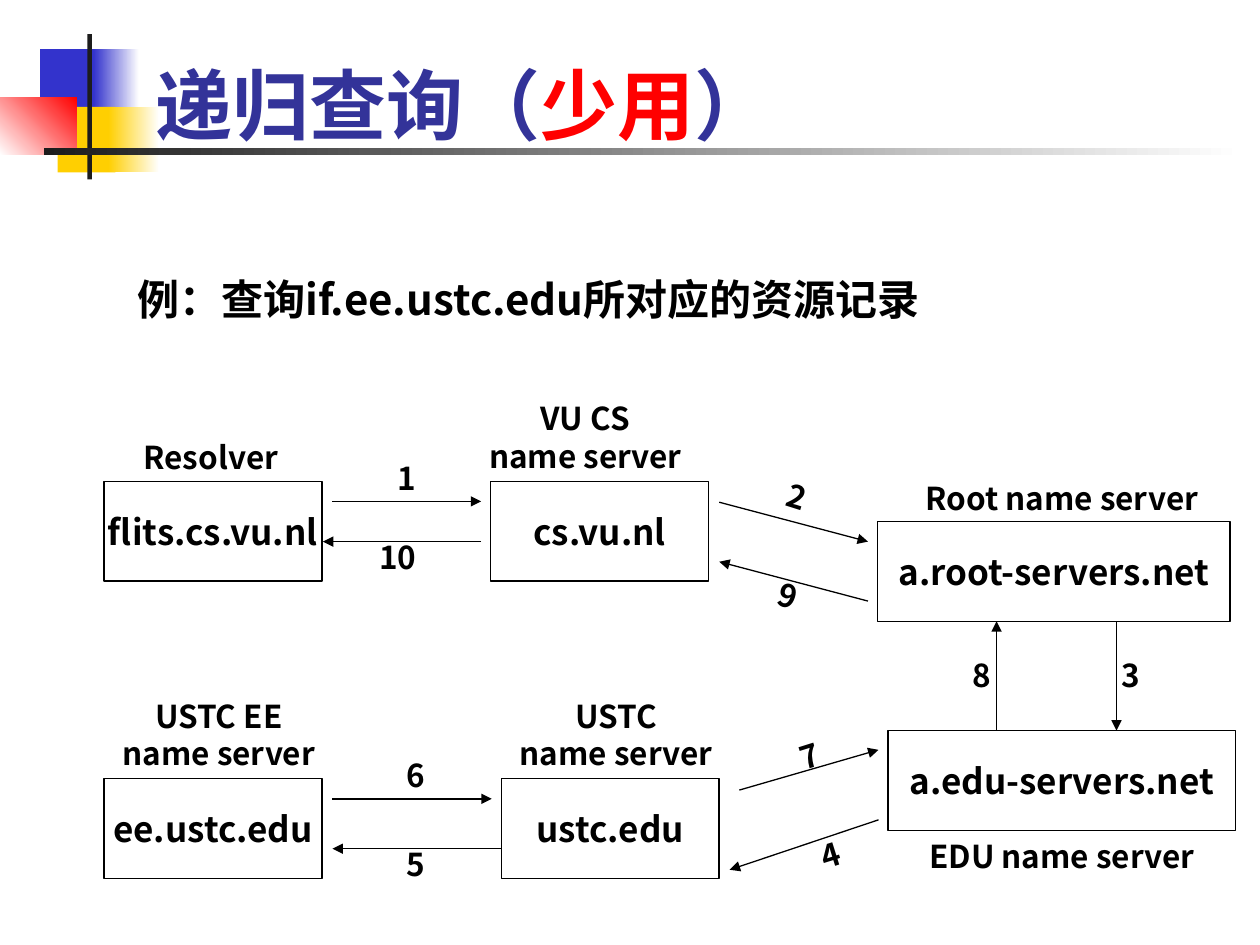
"""Build the recursive DNS query slide."""
from dataclasses import dataclass
from typing import Any, NamedTuple

from pptx import Presentation
from pptx.dml.color import RGBColor
from pptx.enum.shapes import MSO_CONNECTOR, MSO_SHAPE
from pptx.enum.text import MSO_ANCHOR, MSO_AUTO_SIZE, PP_ALIGN
from pptx.oxml.ns import qn
from pptx.util import Pt

RECTANGLE = MSO_SHAPE.RECTANGLE
STRAIGHT = MSO_CONNECTOR.STRAIGHT
TOP, MIDDLE = MSO_ANCHOR.TOP, MSO_ANCHOR.MIDDLE
LEFT, CENTER = PP_ALIGN.LEFT, PP_ALIGN.CENTER
NO_FIT, GROW = MSO_AUTO_SIZE.NONE, MSO_AUTO_SIZE.SHAPE_TO_FIT_TEXT


@dataclass(frozen=True)
class Theme:
    font: str = "Noto Sans CJK SC"
    title_size: float = 44
    example_size: float = 24
    node_size: float = 20
    label_size: float = 18
    line_width: float = 0.75
    black: str = "000000"
    white: str = "FFFFFF"
    title: str = "333399"
    red: str = "FF0000"
    blue: str = "3333CC"
    yellow: str = "FFCF01"
    dark: str = "1C1C1C"


class Area(NamedTuple):
    left: float
    top: float
    width: float
    height: float


class Ornament(NamedTuple):
    area: Area
    colors: tuple[str, ...]
    angle: float = 0


class Caption(NamedTuple):
    text: str
    area: Area


class Arrow(NamedTuple):
    number: str
    start: tuple[float, float]
    tip: tuple[float, float]
    label: tuple[float, float]
    rotation: float = 0


THEME = Theme()
TILT = 17.5
NODE_WIDTH, NODE_HEIGHT = 124.5, 57
LABEL_WIDTH, LABEL_HEIGHT = 39.5, 29
SERVER_WIDTH, SERVER_HEIGHT = 142, 50.5

ORNAMENTS = [
    Ornament(Area(23, 28, 34.5, 37.5), (THEME.blue,)),
    Ornament(Area(53.5, 28, 26, 37.5), (THEME.blue, THEME.white)),
    Ornament(Area(33, 61, 33, 37.5), (THEME.yellow,)),
    Ornament(Area(62, 61, 29, 37.5), (THEME.yellow, THEME.white)),
    Ornament(Area(0, 55.5, 44, 33), (THEME.white, THEME.red), 45),
    Ornament(Area(50, 19.5, 2.5, 83), (THEME.dark,)),
    Ornament(Area(25, 84.5, 685, 4), (THEME.dark, THEME.white)),
]
NODES = [
    Caption("flits.cs.vu.nl", Area(59.5, 275, NODE_WIDTH, NODE_HEIGHT)),
    Caption("cs.vu.nl", Area(280.5, 275, NODE_WIDTH, NODE_HEIGHT)),
    Caption("a.root-servers.net", Area(501.5, 298, 201.5, NODE_HEIGHT)),
    Caption("a.edu-servers.net", Area(507.5, 417.5, 198.5, NODE_HEIGHT)),
    Caption("ustc.edu", Area(286.5, 445, NODE_WIDTH, NODE_HEIGHT)),
    Caption("ee.ustc.edu", Area(59.5, 445, NODE_WIDTH, NODE_HEIGHT)),
]
CAPTIONS = [
    Caption("Resolver", Area(74, 247, 93, LABEL_HEIGHT)),
    Caption("VU CS\vname server", Area(263.5, 224.5, SERVER_WIDTH, SERVER_HEIGHT)),
    Caption("Root name server", Area(502, 270, 209.5, LABEL_HEIGHT)),
    Caption("EDU name server", Area(507.5, 474.5, 198.5, LABEL_HEIGHT)),
    Caption("USTC\vname server", Area(281, 394.5, SERVER_WIDTH, SERVER_HEIGHT)),
    Caption("USTC EE\vname server", Area(54, 394.5, SERVER_WIDTH, SERVER_HEIGHT)),
]
ARROWS = [
    Arrow("1", (190, 286.5), (275, 286.5), (212.5, 258.5)),
    Arrow("2", (411, 287), (496, 309.5), (435.5, 269.5), TILT),
    Arrow("3", (638, 355), (638, 417.5), (626.5, 371.5)),
    Arrow("4", (502, 468.5), (417, 497), (455, 474), -TILT),
    Arrow("5", (286.5, 485), (190, 485), (218, 479.5)),
    Arrow("6", (190, 456.5), (281, 456.5), (218, 428.5)),
    Arrow("7", (422.5, 451.5), (502, 428.5), (443, 417.5), -TILT),
    Arrow("8", (569.5, 417.5), (569.5, 355), (541.5, 371.5)),
    Arrow("9", (496, 343.5), (411, 321), (430.5, 326), TILT),
    Arrow("10", (275, 309.5), (184.5, 309.5), (207.5, 304)),
]


def points(values: tuple[float, ...]) -> list[int]:
    """Convert numbers to lengths in points."""
    return [Pt(value) for value in values]


def apply(target: Any, values: dict[str, Any]) -> None:
    """Set every attribute named in the values."""
    for name, value in values.items():
        setattr(target, name, value)


def add_span(para: Any, text: str, size: float, color: str) -> None:
    """Append bold text to a paragraph."""
    for index, line in enumerate(text.split("\v")):
        if index:
            para.add_line_break()
        span = para.add_run()
        span.text = line
        apply(span.font, {"name": THEME.font, "size": Pt(size), "bold": True})
        span.font.color.rgb = RGBColor.from_string(color)
        east_asian = span.font._element.makeelement(qn("a:ea"), {"typeface": THEME.font})
        span.font._element.find(qn("a:latin")).addnext(east_asian)


def add_rectangle(page: Any, area: Area, colors: tuple[str, ...], angle: float = 0) -> Any:
    """Add a borderless rectangle with a plain or gradient fill."""
    box = page.shapes.add_shape(RECTANGLE, *points(area))
    box.shadow.inherit = False
    box.line.fill.background()
    if len(colors) == 1:
        box.fill.solid()
        box.fill.fore_color.rgb = RGBColor.from_string(colors[0])
        return box
    box.fill.gradient()
    box.fill.gradient_angle = angle
    for stop, color in zip(box.fill.gradient_stops, colors):
        stop.color.rgb = RGBColor.from_string(color)
    return box


def style_line(line: Any) -> None:
    """Give a line the diagram's stroke."""
    line.color.rgb = RGBColor.from_string(THEME.black)
    line.width = Pt(THEME.line_width)


def add_node(page: Any, node: Caption) -> None:
    """Add a host box."""
    box = add_rectangle(page, node.area, (THEME.white,))
    style_line(box.line)
    apply(box.text_frame, {"word_wrap": False, "vertical_anchor": MIDDLE})
    para = box.text_frame.paragraphs[0]
    para.alignment = CENTER
    add_span(para, node.text, THEME.node_size, THEME.black)


def add_text(page: Any, caption: Caption, size: float = THEME.label_size,
             alignment: Any = CENTER, rotation: float = 0) -> None:
    """Add a wrapped text box."""
    box = page.shapes.add_textbox(*points(caption.area))
    box.rotation = rotation
    apply(box.text_frame, {"word_wrap": True, "auto_size": GROW, "vertical_anchor": TOP})
    para = box.text_frame.paragraphs[0]
    para.alignment = alignment
    add_span(para, caption.text, size, THEME.black)


def add_arrow(page: Any, arrow: Arrow) -> None:
    """Add a numbered arrow."""
    connector = page.shapes.add_connector(STRAIGHT, *points(arrow.start + arrow.tip))
    style_line(connector.line)
    stroke = connector.line._get_or_add_ln()
    stroke.append(stroke.makeelement(qn("a:tailEnd"), {"type": "triangle"}))
    stroke.addnext(stroke.makeelement(qn("a:effectLst"), {}))
    area = Area(*arrow.label, LABEL_WIDTH, LABEL_HEIGHT)
    add_text(page, Caption(arrow.number, area), rotation=arrow.rotation)


def place_title(page: Any) -> None:
    """Fill the title placeholder and bring it above the ornaments."""
    title = page.shapes.title
    area = points(Area(81.5, 29, 620.5, 104.5))
    apply(title, dict(zip(("left", "top", "width", "height"), area)))
    apply(title.text_frame, {"word_wrap": True, "auto_size": NO_FIT, "vertical_anchor": TOP})
    para = title.text_frame.paragraphs[0]
    para.alignment = LEFT
    for text, color in (("递归查询（", THEME.title), ("少用", THEME.red), ("）", THEME.title)):
        add_span(para, text, THEME.title_size, color)
    title._element.getparent().append(title._element)


def main() -> None:
    """Build and save the deck."""
    deck = Presentation()
    apply(deck, {"slide_width": Pt(720), "slide_height": Pt(540)})
    page = deck.slides.add_slide(deck.slide_layouts[5])
    for ornament in ORNAMENTS:
        add_rectangle(page, *ornament)
    place_title(page)
    example = Caption("例：查询if.ee.ustc.edu所对应的资源记录", Area(71.5, 152.5, 466.5, 36))
    add_text(page, example, THEME.example_size, LEFT)
    for node in NODES:
        add_node(page, node)
    for caption in CAPTIONS:
        add_text(page, caption)
    for arrow in ARROWS:
        add_arrow(page, arrow)
    deck.save("out.pptx")


if __name__ == "__main__":
    main()
